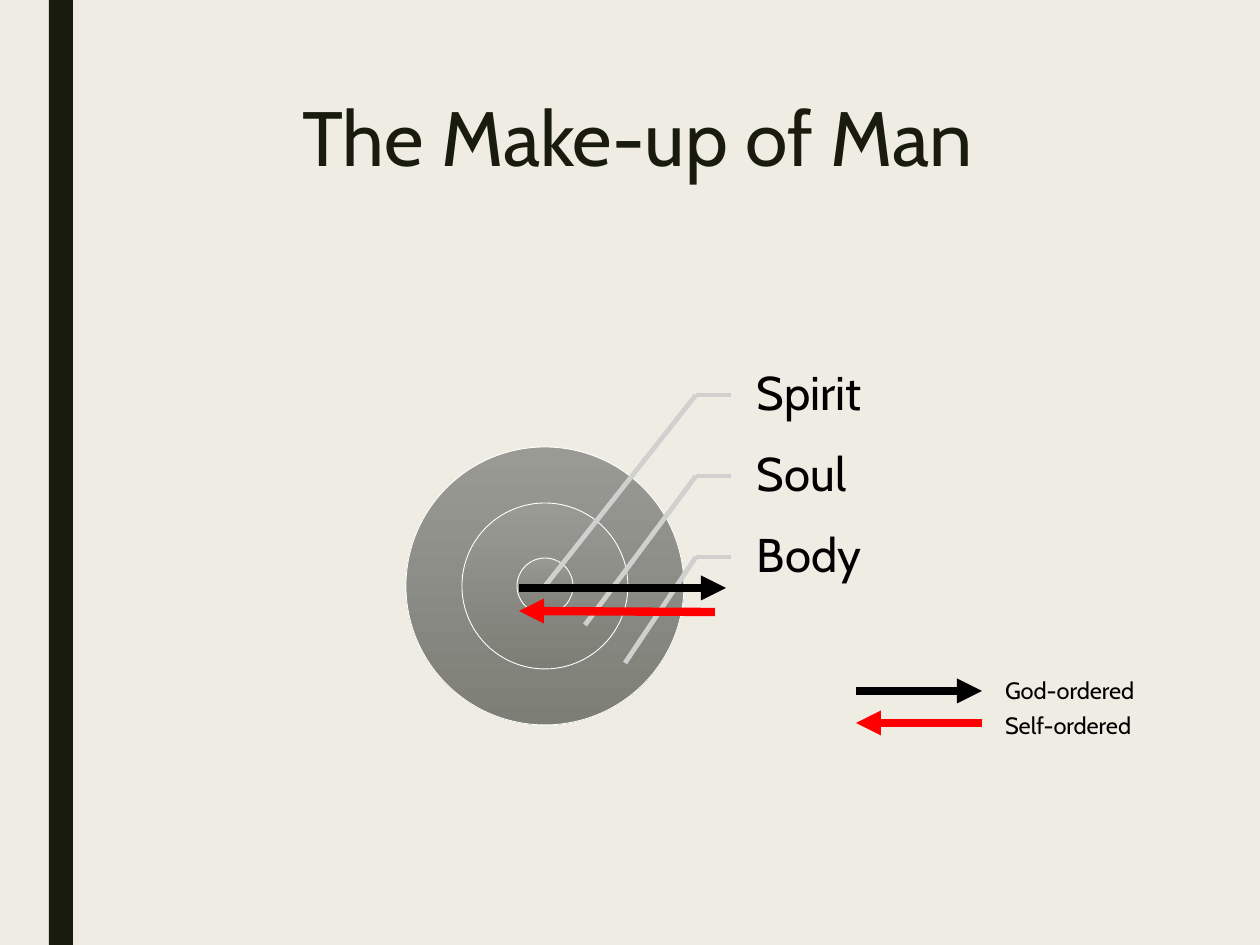
from lxml import etree
from pptx import Presentation
from pptx import util as u
from pptx.dml.color import RGBColor
from pptx.enum import shapes, text
from pptx.oxml.ns import qn

SCALE = 914400 / 126
FONT = "Cabin"
HUES = {
    "paper": "EFEDE3", "dark": "191B0E", "light": "999A94", "deep": "7D7E76",
    "white": "FFFFFF", "pale": "D0D0CE", "black": "000000", "red": "FF0000",
}
COLORS = {name: RGBColor.from_string(hue) for name, hue in HUES.items()}


def px(*values):
    return [u.Emu(round(v * SCALE)) for v in values]


def draw_line(start, end, color, width, arrow=False):
    line = slide.shapes.add_connector(
        shapes.MSO_CONNECTOR.STRAIGHT, *px(*start, *end))
    line.line.color.rgb = COLORS[color]
    line.line.width = u.Pt(width)
    if arrow:
        etree.SubElement(line.line._get_or_add_ln(), qn("a:tailEnd"), type="triangle")
    etree.SubElement(line._element.spPr, qn("a:effectLst"))


deck = Presentation()
deck.slide_width, deck.slide_height = px(1260, 945)
slide = deck.slides.add_slide(deck.slide_layouts[5])
slide.background.fill.solid()
slide.background.fill.fore_color.rgb = COLORS["paper"]

bar = slide.shapes.add_shape(shapes.MSO_SHAPE.RECTANGLE, *px(49, 0, 24, 945))
bar.shadow.inherit = False
bar.fill.solid()
bar.fill.fore_color.rgb = COLORS["dark"]
bar.line.fill.background()

title = slide.shapes.title
title.left, title.top, title.width, title.height = px(141, 94, 993, 204)
frame = title.text_frame
frame.text = "The Make-up of Man"
frame.auto_size = text.MSO_AUTO_SIZE.NONE
frame.vertical_anchor = text.MSO_ANCHOR.TOP
para = frame.paragraphs[0]
para.alignment = text.PP_ALIGN.CENTER
para.line_spacing = 0.89
para.font.name, para.font.size = FONT, u.Pt(44)
para.font.color.rgb = COLORS["dark"]

# Rings share one centre
mid_x, mid_y = 545, 586
for radius in (139, 83, 28):
    ring = slide.shapes.add_shape(
        shapes.MSO_SHAPE.OVAL,
        *px(mid_x - radius, mid_y - radius, 2 * radius, 2 * radius))
    ring.shadow.inherit = False
    ring.fill.gradient()
    ring.fill.gradient_angle = 270
    for stop, color, place in zip(ring.fill.gradient_stops, ("light", "deep"), (0, 1)):
        stop.color.rgb = COLORS[color]
        stop.position = place
    ring.line.color.rgb = COLORS["white"]
    ring.line.width = u.Pt(0.5)

# Labels: wording, box, size, left inset
labels = []
for row, (word, tip) in enumerate(
        [("Spirit", (545, 586)), ("Soul", (585, 625)), ("Body", (625, 663))]):
    level = 395 + 81 * row
    draw_line((696, level), (731, level), "pale", 2.75)
    draw_line((696, level), tip, "pale", 2.75)
    labels.append((word, (731, level - 40, 139, 80), 27, 26))

for start, end, color in [
    ((519, 588), (726, 588), "black"),
    ((715, 612), (519, 611), "red"),
    ((856, 691), (982, 691), "black"),
    ((982, 723), (856, 723), "red"),
]:
    draw_line(start, end, color, 4.75, arrow=True)

labels += [("God-ordered", (993, 669, 180, 42), 13.5, 12),
           ("Self-ordered", (993, 704, 180, 42), 13.5, 12)]
for word, place, size, inset in labels:
    frame = slide.shapes.add_textbox(*px(*place)).text_frame
    frame.word_wrap = True
    frame.vertical_anchor = text.MSO_ANCHOR.MIDDLE
    frame.margin_left, frame.margin_top = px(inset, 5)
    frame.margin_right, frame.margin_bottom = px(5, 5)
    frame.text = word
    para = frame.paragraphs[0]
    para.line_spacing = 0.9 if size == 27 else 1
    para.font.name, para.font.size = FONT, u.Pt(size)
    para.font.color.rgb = COLORS["black"]

deck.save("out.pptx")
